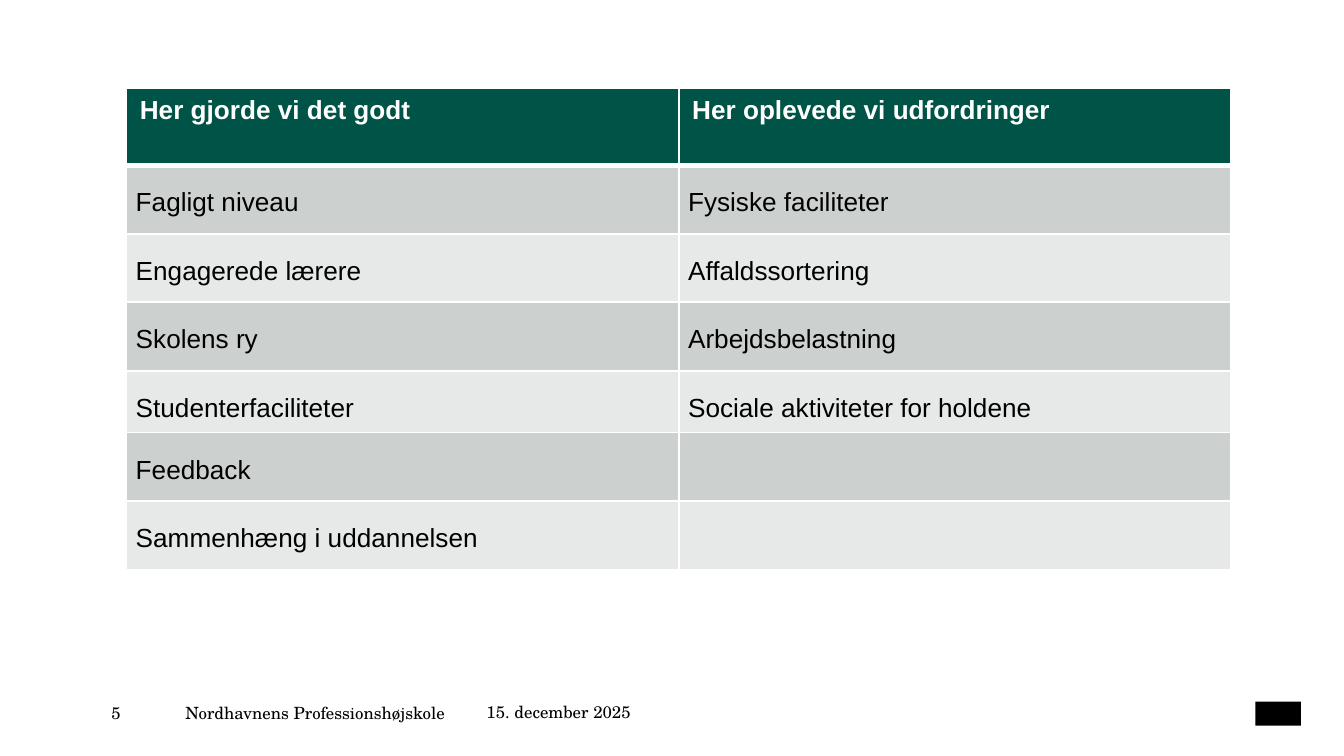
from itertools import zip_longest

from lxml.etree import SubElement
from pptx import Presentation
from pptx.dml.color import RGBColor
from pptx.enum.shapes import MSO_SHAPE
from pptx.enum.text import MSO_ANCHOR
from pptx.oxml.ns import qn
from pptx.util import Inches, Pt

SLIDE_WIDTH = Inches(10)
SLIDE_HEIGHT = SLIDE_WIDTH * 9 // 16
GREEN = RGBColor(0x00, 0x54, 0x47)
DARK_BAND = RGBColor(0xCC, 0xD1, 0xCF)
LIGHT_BAND = RGBColor(0xE7, 0xE9, 0xE9)
WHITE = RGBColor(0xFF, 0xFF, 0xFF)
BLACK = RGBColor(0x00, 0x00, 0x00)
BODY_FONT, FOOTER_FONT = "Arial", "TeX Gyre Schola"

HEADINGS = ("Her gjorde vi det godt", "Her oplevede vi udfordringer")
STRENGTHS = (
    "Fagligt niveau",
    "Engagerede lærere",
    "Skolens ry",
    "Studenterfaciliteter",
    "Feedback",
    "Sammenhæng i uddannelsen",
)
CHALLENGES = (
    "Fysiske faciliteter",
    "Affaldssortering",
    "Arbejdsbelastning",
    "Sociale aktiviteter for holdene",
)
ROW_HEIGHTS = (0.57, 0.51, 0.51, 0.51, 0.46, 0.51, 0.51)
FOOTER = (
    ("5", 0.83, 5.23, 0.46),
    ("Nordhavnens Professionshøjskole", 1.38, 5.23, 2.08),
    ("15. december 2025", 3.62, 5.22, 2.8),
)


def add_text(paragraph, wording, font, size, color, bold=False):
    run = paragraph.add_run()
    run.text = wording
    run.font.name = font
    run.font.size = Pt(size)
    run.font.color.rgb = color
    run.font.bold = bold


def set_borders(cell, bottom_width):
    properties = cell._tc.get_or_add_tcPr()
    widths = {"a:lnL": 1, "a:lnR": 1, "a:lnT": 1, "a:lnB": bottom_width}
    for side, width in widths.items():
        border = SubElement(properties, qn(side), w=str(Pt(width)))
        fill = SubElement(border, qn("a:solidFill"))
        SubElement(fill, qn("a:srgbClr"), val=str(WHITE))


def fill_cell(cell, color, bottom_width=1):
    set_borders(cell, bottom_width)
    cell.fill.solid()
    cell.fill.fore_color.rgb = color
    cell.vertical_anchor = MSO_ANCHOR.TOP


def fill_heading(cell, wording):
    fill_cell(cell, GREEN, bottom_width=3)
    add_text(cell.text_frame.paragraphs[0], wording, BODY_FONT, 14, WHITE, bold=True)


def fill_entry(cell, wording, color):
    fill_cell(cell, color)
    if wording:
        cell.margin_left = cell.margin_right = Inches(0.07)
        cell.margin_top, cell.margin_bottom = Pt(14), 0
        paragraph = cell.text_frame.paragraphs[0]
        paragraph.line_spacing = Pt(14)
        add_text(paragraph, wording, BODY_FONT, 14, BLACK)


def add_evaluation_table(slide):
    table = slide.shapes.add_table(
        len(ROW_HEIGHTS), len(HEADINGS),
        Inches(0.94), Inches(0.66), Inches(8.22), Inches(sum(ROW_HEIGHTS)),
    ).table
    for row, height in zip(table.rows, ROW_HEIGHTS):
        row.height = Inches(height)
    for column, heading in enumerate(HEADINGS):
        fill_heading(table.cell(0, column), heading)
    entries = zip_longest(STRENGTHS, CHALLENGES, fillvalue="")
    for row, pair in enumerate(entries, start=1):
        band = DARK_BAND if row % 2 else LIGHT_BAND
        for column, entry in enumerate(pair):
            fill_entry(table.cell(row, column), entry, band)


def add_footer_text(slide, wording, left, top, width):
    footer = slide.shapes.add_textbox(
        Inches(left), Inches(top), Inches(width), Inches(0.15)
    ).text_frame
    footer.word_wrap = True
    footer.margin_left = footer.margin_right = 0
    footer.margin_top = footer.margin_bottom = 0
    add_text(footer.paragraphs[0], wording, FOOTER_FONT, 9, BLACK)


def add_emblem(slide):
    emblem = slide.shapes.add_shape(
        MSO_SHAPE.RECTANGLE, Inches(9.34), Inches(5.22), Inches(0.34), Inches(0.18)
    )
    emblem.shadow.inherit = False
    emblem.fill.solid()
    emblem.fill.fore_color.rgb = BLACK
    emblem.line.fill.background()


def main():
    presentation = Presentation()
    presentation.slide_width = SLIDE_WIDTH
    presentation.slide_height = SLIDE_HEIGHT
    slide = presentation.slides.add_slide(presentation.slide_layouts[6])
    for item in FOOTER:
        add_footer_text(slide, *item)
    add_emblem(slide)
    add_evaluation_table(slide)
    presentation.save("out.pptx")


if __name__ == "__main__":
    main()
